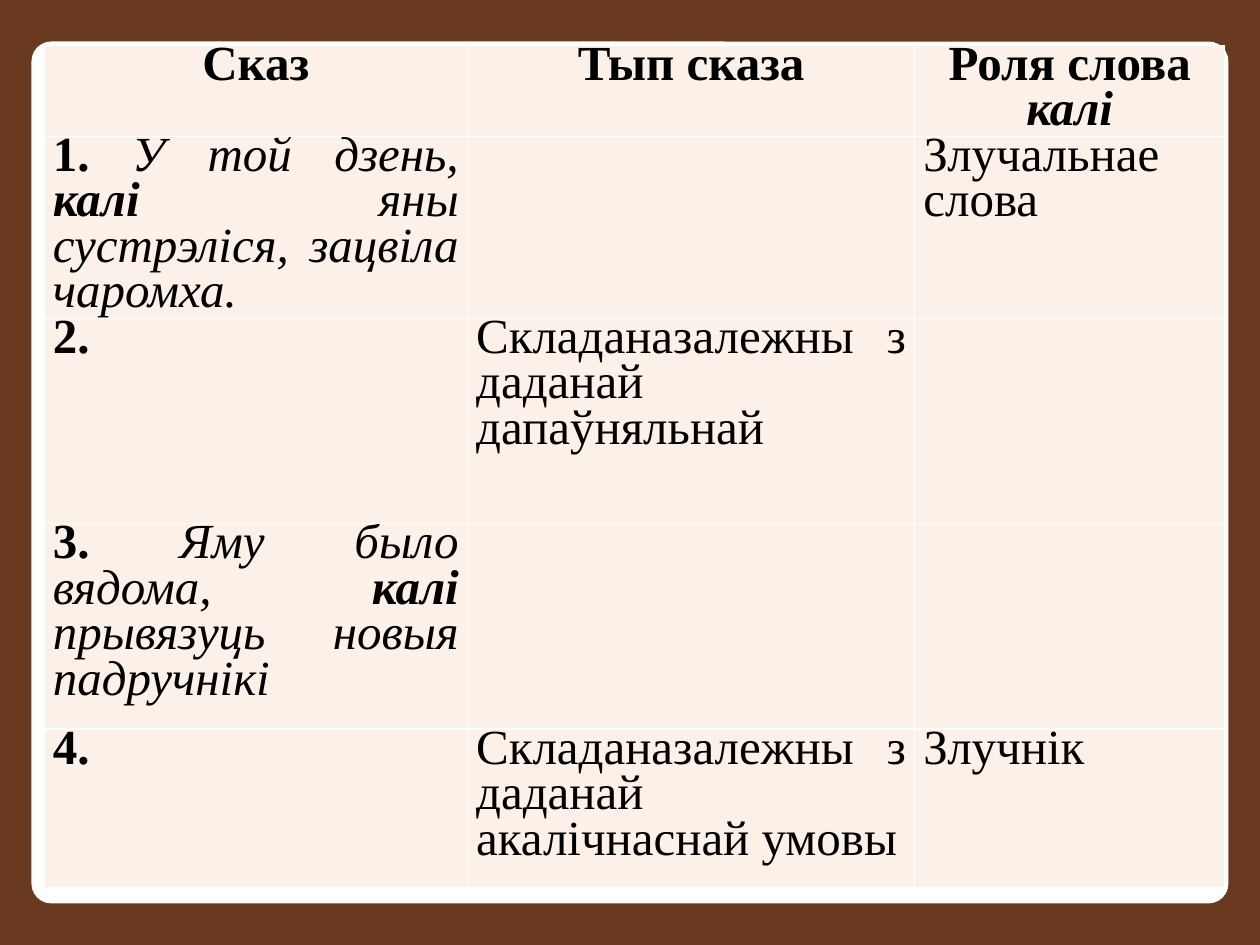
from lxml import etree
from pptx import Presentation
from pptx.dml.color import RGBColor
from pptx.enum.shapes import MSO_SHAPE
from pptx.enum.text import PP_ALIGN
from pptx.oxml.ns import qn
from pptx.util import Inches, Pt

ROUNDED = MSO_SHAPE.ROUNDED_RECTANGLE
CENTER, JUSTIFY = PP_ALIGN.CENTER, PP_ALIGN.JUSTIFY
COLORS = {"frame": "6A3A20", "panel": "FFFFFF", "cell": "FCF1E8",
          "border": "FFFFFF", "text": "000000"}
FONT = "Times New Roman"
WIDTH, HEIGHT = Inches(10), Inches(7.5)
COLUMNS = [3.36, 3.55, 2.46]
ROWS = [0.71, 1.26, 1.63, 1.63, 1.26]

# Each cell is a list of (text, style) spans: b = bold, i = italic
CELLS = [
    [[("Сказ", "b")], [("Тып сказа", "b")],
     [("Роля слова ", "b"), ("калі", "bi")]],
    [[("1.", "b"), (" У той дзень, ", "i"), ("калі", "bi"),
      (" яны сустрэліся, зацвіла чаромха.", "i")],
     [], [("Злучальнае слова", "")]],
    [[("2.", "b")], [("Складаназалежны з даданай дапаўняльнай", "")], []],
    [[("3.", "b"), (" Яму было вядома, ", "i"), ("калі ", "bi"),
      ("прывязуць новыя падручнікі", "i")], [], []],
    [[("4.", "b")], [("Складаназалежны з даданай акалічнаснай умовы", "")],
     [("Злучнік", "")]],
]


def color(name):
    return RGBColor.from_string(COLORS[name])


def add_panel(page, left, top, width, height):
    panel = page.shapes.add_shape(ROUNDED, left, top, width, height)
    panel.adjustments[0] = 0.023
    panel.shadow.inherit = False
    panel.fill.solid()
    panel.fill.fore_color.rgb = color("panel")
    panel.line.fill.background()


def set_borders(cell):
    properties = cell._tc.get_or_add_tcPr()
    for index, side in enumerate(("a:lnL", "a:lnR", "a:lnT", "a:lnB")):
        line = etree.Element(qn(side), w=str(Pt(1)))
        fill = etree.SubElement(line, qn("a:solidFill"))
        etree.SubElement(fill, qn("a:srgbClr"), val=COLORS["border"])
        properties.insert(index, line)


def fill_cell(cell, spans, alignment):
    cell.fill.solid()
    cell.fill.fore_color.rgb = color("cell")
    set_borders(cell)
    if not spans:
        return
    cell.margin_left = cell.margin_right = Inches(0.07)
    cell.margin_top = cell.margin_bottom = 0
    para = cell.text_frame.paragraphs[0]
    para.alignment = alignment
    para.line_spacing = Pt(26)
    for text, style in spans:
        span = para.add_run()
        span.text = text
        span.font.name = FONT
        span.font.size = Pt(28)
        span.font.color.rgb = color("text")
        span.font.bold = "b" in style
        span.font.italic = "i" in style


def add_sentence_table(page, left, top, width, height):
    table = page.shapes.add_table(len(ROWS), len(COLUMNS),
                                  left, top, width, height).table
    for column, share in zip(table.columns, COLUMNS):
        column.width = int(width * share / sum(COLUMNS))
    for row, share in zip(table.rows, ROWS):
        row.height = int(height * share / sum(ROWS))
    for r, row_cells in enumerate(CELLS):
        for c, spans in enumerate(row_cells):
            fill_cell(table.cell(r, c), spans, JUSTIFY if r else CENTER)


def main():
    deck = Presentation()
    deck.slide_width, deck.slide_height = WIDTH, HEIGHT
    page = deck.slides.add_slide(deck.slide_layouts[6])

    # Brown frame around a white panel
    page.background.fill.solid()
    page.background.fill.fore_color.rgb = color("frame")
    add_panel(page, Inches(0.25), Inches(0.33), Inches(9.5), Inches(6.84))

    # Table of sentences
    add_sentence_table(page, Inches(0.35), Inches(0.36),
                       Inches(sum(COLUMNS)), Inches(sum(ROWS)))
    deck.save("out.pptx")


if __name__ == "__main__":
    main()
